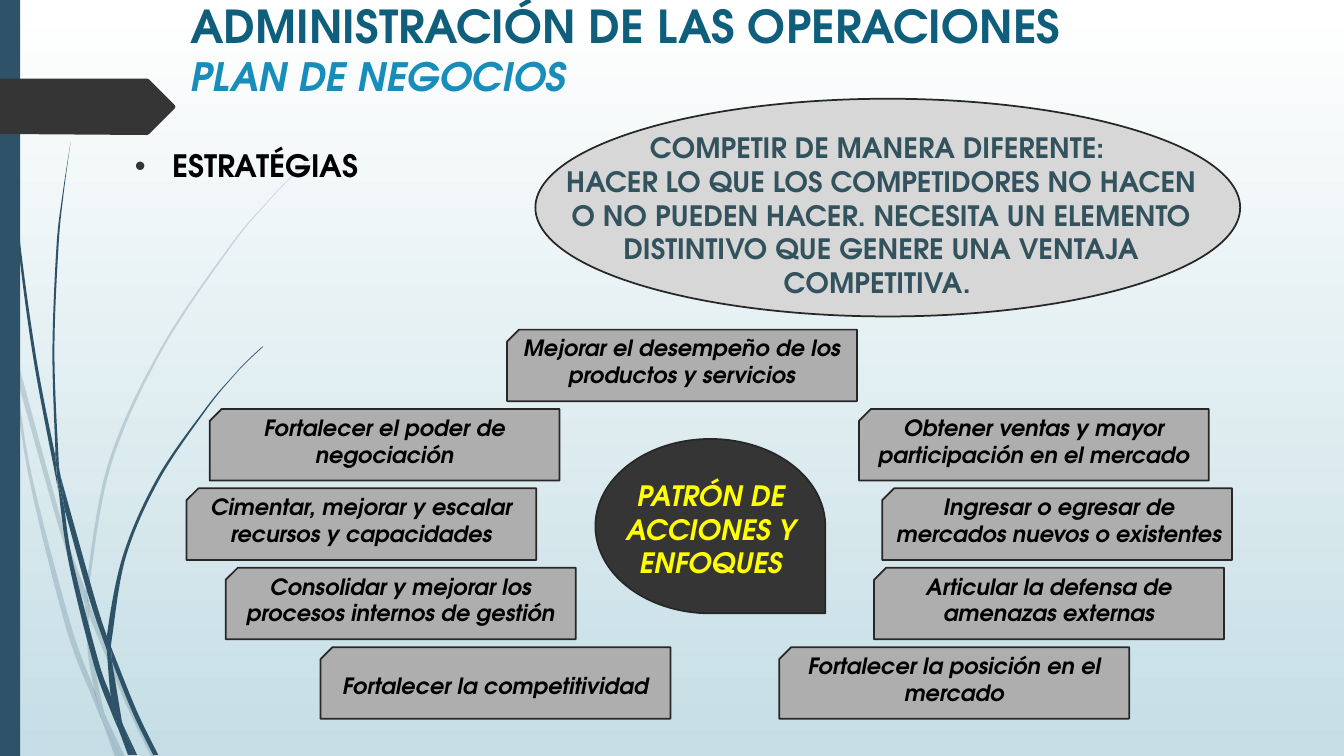
from lxml import etree
from pptx import Presentation
from pptx.dml.color import RGBColor
from pptx.enum.shapes import MSO_SHAPE
from pptx.enum.text import MSO_ANCHOR, PP_ALIGN
from pptx.oxml.ns import qn
from pptx.util import Inches, Pt

CENTER, LEFT, TOP = PP_ALIGN.CENTER, PP_ALIGN.LEFT, MSO_ANCHOR.TOP
OVAL, TEAR, RECTANGLE = MSO_SHAPE.OVAL, MSO_SHAPE.TEAR, MSO_SHAPE.RECTANGLE
SNIPPED = MSO_SHAPE.SNIP_1_RECTANGLE
FONT = "TeX Gyre Adventor"
COLORS = {
    "sky": "C5DEE5", "white": "FFFFFF", "navy": "2E5369", "charcoal": "353535",
    "outline": "272727", "card": "AEAEAE", "oval": "D7D7D7", "title": "0F5E7C",
    "subtitle": "178DBB", "slate": "32525D", "yellow": "FFFF00", "black": "000000",
}


def paint(shape, fill, line=None):
    """Set the fill and outline of a shape and drop its shadow."""
    shape.shadow.inherit = False
    shape.fill.solid()
    shape.fill.fore_color.rgb = RGBColor.from_string(COLORS[fill])
    if line:
        shape.line.color.rgb = RGBColor.from_string(COLORS[line])
        shape.line.width = Pt(1.25)
    else:
        shape.line.fill.background()


def add_text(box, paragraphs, styles, align=CENTER):
    """Add a wrapped text box; each run takes the next (size, color, italic)."""
    text_box = slide.shapes.add_textbox(*map(Inches, box))
    frame = text_box.text_frame
    frame.word_wrap = True
    frame.vertical_anchor = TOP
    frame.text = "\n".join(paragraphs)
    runs = [run for paragraph in frame.paragraphs for run in paragraph.runs]
    for paragraph in frame.paragraphs:
        paragraph.alignment = align
    for run, (size, color, italic) in zip(runs, styles):
        run.font.name, run.font.size = FONT, Pt(size)
        run.font.bold, run.font.italic = True, italic
        run.font.color.rgb = RGBColor.from_string(COLORS[color])
    return frame


presentation = Presentation()
presentation.slide_width = Inches(13.33)
presentation.slide_height = Inches(7.5)
slide = presentation.slides.add_slide(presentation.slide_layouts[6])

# Background: white fading down to pale blue
background = slide.background.fill
background.gradient()
background.gradient_angle = 270
for stop, color, position in zip(background.gradient_stops, ("white", "sky"), (0, 1)):
    stop.color.rgb = RGBColor.from_string(COLORS[color])
    stop.position = position

# Grass blades: every piece lies between two smooth edges, given by their points
pale_blades = [
    ([(0.11, 3.5), (0.09, 3.22), (0, 2.82)], [(0, 2.99), (0.1, 3.44), (0.11, 3.5)]),
    ([(0.14, 3.45), (0.62, 5.2), (0.85, 5.86)],
     [(0.84, 5.99), (0.58, 5.22), (0.17, 3.76)]),
    ([(0.88, 5.96), (0.92, 6.07), (1.27, 6.92), (1.55, 7.51)],
     [(1.5, 7.51), (1.23, 6.94), (0.88, 6.1)]),
    ([(1.19, 7.51), (1.05, 7.11)], [(1.24, 7.51)]),
    ([(0.11, 3.5), (0.28, 4.7), (0.65, 6.21), (0.92, 6.93), (1.01, 7.14)],
     [(0.99, 7.07), (0.93, 6.83), (0.7, 6.19), (0.31, 4.69), (0.17, 3.76)]),
    ([(0.84, 5.99), (0.87, 6.46), (0.93, 6.83), (0.96, 6.92), (1.05, 7.11)],
     [(1.03, 7.06), (0.91, 6.46), (0.88, 6.1), (0.88, 6.08)]),
    ([(0.88, 5.96), (0.88, 5.84), (1.1, 4.62), (1.6, 3.49), (2.29, 2.45),
      (2.68, 1.98), (2.9, 1.75), (3.12, 1.54)],
     [(3.12, 1.53), (2.89, 1.75), (2.68, 1.97), (2.28, 2.44), (1.58, 3.48),
      (1.07, 4.61), (0.85, 5.84), (0.85, 5.86)]),
    ([(1.01, 7.14), (1.14, 7.51)], [(1.19, 7.51)]),
    ([(0.88, 6.1), (0.88, 5.96), (0.85, 5.86)], [(0.84, 5.99), (0.88, 6.08)]),
    ([(0.93, 6.83), (0.99, 7.07), (1.01, 7.14), (1.19, 7.51)],
     [(1.05, 7.11), (0.96, 6.92)]),
]
dark_blades = [
    ([(0.04, 0), (0.05, 0.48), (0.08, 1.09), (0.19, 2.32), (0.36, 3.55), (0.55, 4.53)],
     [(0.57, 4.81), (0.56, 4.77), (0.33, 3.55), (0.17, 2.33), (0.07, 1.1),
      (0.04, 0.48), (0.03, 0)]),
    ([(0.6, 4.72), (0.93, 5.9), (1.06, 6.31)],
     [(1.06, 6.45), (0.88, 5.92), (0.64, 5.05)]),
    ([(1.1, 6.41), (1.13, 6.49), (1.36, 7.06), (1.57, 7.49)],
     [(1.52, 7.49), (1.32, 7.08), (1.11, 6.56)]),
    ([(0.57, 4.77), (0.68, 5.57), (0.93, 6.59), (1.11, 7.08), (1.17, 7.22)],
     [(1.16, 7.17), (1.1, 6.91), (0.98, 6.57), (0.72, 5.56), (0.64, 5.05)]),
    ([(0.6, 4.72), (0.58, 4.53), (0.54, 3.49), (0.58, 2.45), (0.63, 1.93), (0.7, 1.41)],
     [(0.7, 1.41), (0.62, 1.93), (0.56, 2.45), (0.52, 3.49), (0.55, 4.49)]),
    ([(1.33, 7.49), (1.22, 7.19)], [(1.36, 7.49)]),
    ([(0.57, 4.77), (0.64, 5.05)], [(0.6, 4.72), (0.55, 4.49), (0.55, 4.53)]),
    ([(1.11, 6.33), (1.25, 5.52), (1.58, 4.76), (2.05, 4.06), (2.31, 3.74),
      (2.45, 3.59), (2.61, 3.44)],
     [(2.6, 3.44), (2.45, 3.58), (2.31, 3.73), (2.04, 4.05), (1.56, 4.74),
      (1.22, 5.51), (1.06, 6.31), (1.1, 6.41)]),
    ([(1.17, 7.22), (1.27, 7.49)], [(1.31, 7.49)]),
    ([(1.06, 6.45), (1.1, 6.91), (1.16, 7.06), (1.22, 7.19)],
     [(1.21, 7.16), (1.11, 6.56), (1.09, 6.51)]),
    ([(1.06, 6.45), (1.11, 6.56)], [(1.1, 6.41), (1.06, 6.31)]),
    ([(1.1, 6.91), (1.16, 7.17), (1.17, 7.22), (1.3, 7.49)],
     [(1.33, 7.49), (1.22, 7.19), (1.16, 7.06)]),
]
for blades, opacity in ((pale_blades, 20), (dark_blades, 100)):
    for first_edge, second_edge in blades:
        corners = [(Inches(x), Inches(y)) for x, y in first_edge + second_edge]
        builder = slide.shapes.build_freeform(*corners[0])
        builder.add_line_segments(corners[1:])
        blade = builder.convert_to_shape()
        paint(blade, "navy")
        if opacity < 100:
            color = blade._element.spPr.find(".//" + qn("a:srgbClr"))
            etree.SubElement(color, qn("a:alpha"), val=str(opacity * 1000))

        # Bend each straight segment inside an edge into a smooth curve
        outline = blade._element.spPr.find(".//" + qn("a:path"))
        points = [(int(p.get("x")), int(p.get("y"))) for p in outline.iter(qn("a:pt"))]
        edge_starts = (0, len(first_edge), len(corners))
        for end, segment in enumerate(outline.findall(qn("a:lnTo")), 1):
            if end in edge_starts or end >= len(corners):
                continue
            a, b = points[end - 1], points[end]
            before = a if end - 1 in edge_starts else points[end - 2]
            after = b if end + 1 in edge_starts else points[end + 1]
            leaving = [p + (r - q) / 6 for p, q, r in zip(a, before, b)]
            arriving = [p - (r - q) / 6 for p, q, r in zip(b, a, after)]
            curve = etree.Element(qn("a:cubicBezTo"))
            for x, y in (leaving, arriving, b):
                etree.SubElement(curve, qn("a:pt"), x=str(round(x)), y=str(round(y)))
            outline.replace(segment, curve)

# Left bar and page arrow
bar = slide.shapes.add_shape(RECTANGLE, 0, 0, Inches(0.2), Inches(7.5))
paint(bar, "navy")
arrow_points = [(0, 0.78), (1.46, 0.78), (1.48, 0.79), (1.73, 1.04), (1.74, 1.06),
                (1.73, 1.08), (1.48, 1.33), (1.46, 1.34), (0, 1.33)]
arrow_outline = [(Inches(x), Inches(y)) for x, y in arrow_points]
builder = slide.shapes.build_freeform(*arrow_outline[0])
builder.add_line_segments(arrow_outline[1:])
paint(builder.convert_to_shape(), "charcoal")

# Title and bullet
add_text((1.79, -0.07, 9.75, 1.4),
         ["ADMINISTRACIÓN DE LAS OPERACIONES\vPLAN DE NEGOCIOS"],
         [(32.4, "title", False), (27.9, "subtitle", True)], LEFT)
body = add_text((1.24, 1.41, 11.73, 4.44), ["ESTRATÉGIAS"], [(22, "black", False)], LEFT)
properties = body.paragraphs[0]._p.get_or_add_pPr()
properties.set("marL", str(Inches(0.37)))
properties.set("indent", str(Inches(-0.37)))
bullet_color = etree.SubElement(properties, qn("a:buClr"))
etree.SubElement(bullet_color, qn("a:srgbClr"), val=COLORS["charcoal"])
etree.SubElement(properties, qn("a:buFont"), typeface="Arial")
etree.SubElement(properties, qn("a:buChar"), char="•")

# Oval with the key idea
oval = slide.shapes.add_shape(OVAL, Inches(5.31), Inches(0.98), Inches(6.99), Inches(2.16))
paint(oval, "oval", "outline")
add_text((5.49, 1.25, 6.5, 1.78),
         ["COMPETIR DE MANERA DIFERENTE: ",
          "HACER LO QUE LOS COMPETIDORES NO HACEN O NO PUEDEN HACER. NECESITA UN "
          "ELEMENTO DISTINTIVO QUE GENERE UNA VENTAJA COMPETITIVA. "],
         [(20, "slate", False)] * 2)

# Central teardrop
drop = slide.shapes.add_shape(TEAR, Inches(6.18), Inches(4.08), Inches(1.73), Inches(2.28))
drop.rotation = 90
paint(drop, "charcoal", "outline")
add_text((5.91, 4.7, 2.28, 1.11), ["PATRÓN DE ACCIONES Y ENFOQUES"],
         [(20, "yellow", True)])

# Strategy cards around the teardrop: left, row, text
FIRST_ROW, LAST_ROW = 3.27, 6.42
cards = [
    (8.52, 1, "Obtener ventas y mayor participación en el mercado"),
    (8.75, 2, "Ingresar o egresar de mercados nuevos o existentes"),
    (8.67, 3, "Articular la defensa de amenazas externas"),
    (7.73, 4, "Fortalecer la posición en el mercado"),
    (3.18, 4, "Fortalecer la competitividad"),
    (2.24, 3, "Consolidar y mejorar los procesos internos de gestión"),
    (1.85, 2, "Cimentar, mejorar y escalar recursos y capacidades"),
    (2.08, 1, "Fortalecer el poder de negociación"),
    (5.03, 0, "Mejorar el desempeño de los productos y servicios"),
]
for left, row, text in cards:
    top = FIRST_ROW + row * (LAST_ROW - FIRST_ROW) / 4
    card = slide.shapes.add_shape(SNIPPED, *map(Inches, (left, top, 3.47, 0.71)))
    card._element.spPr.xfrm.set("flipH", "1")
    paint(card, "card", "outline")
    text_top, text_height = (top + 0.2, 0.37) if len(text) < 30 else (top, 0.64)
    text_width = 3.51 if text.startswith("Ingresar") else 3.47
    add_text((left, text_top, text_width, text_height), [text], [(16, "black", True)])

presentation.save("out.pptx")
